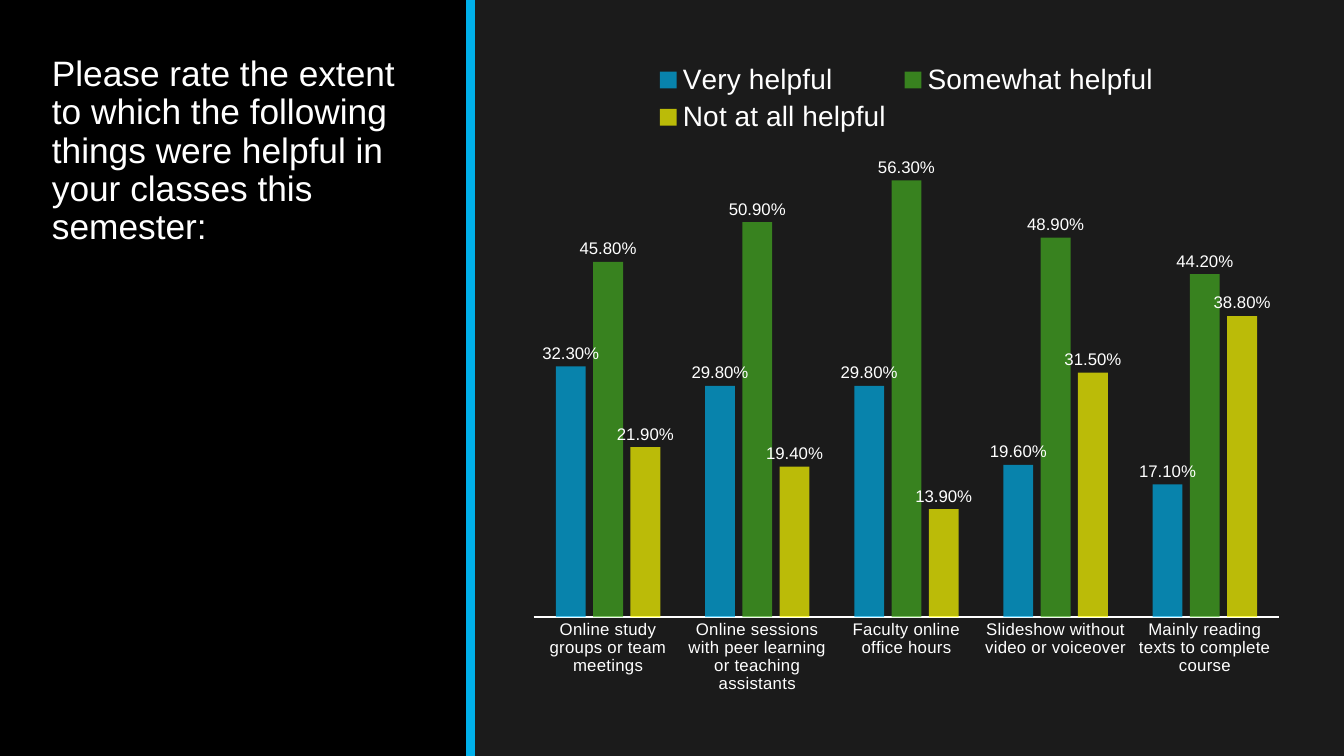
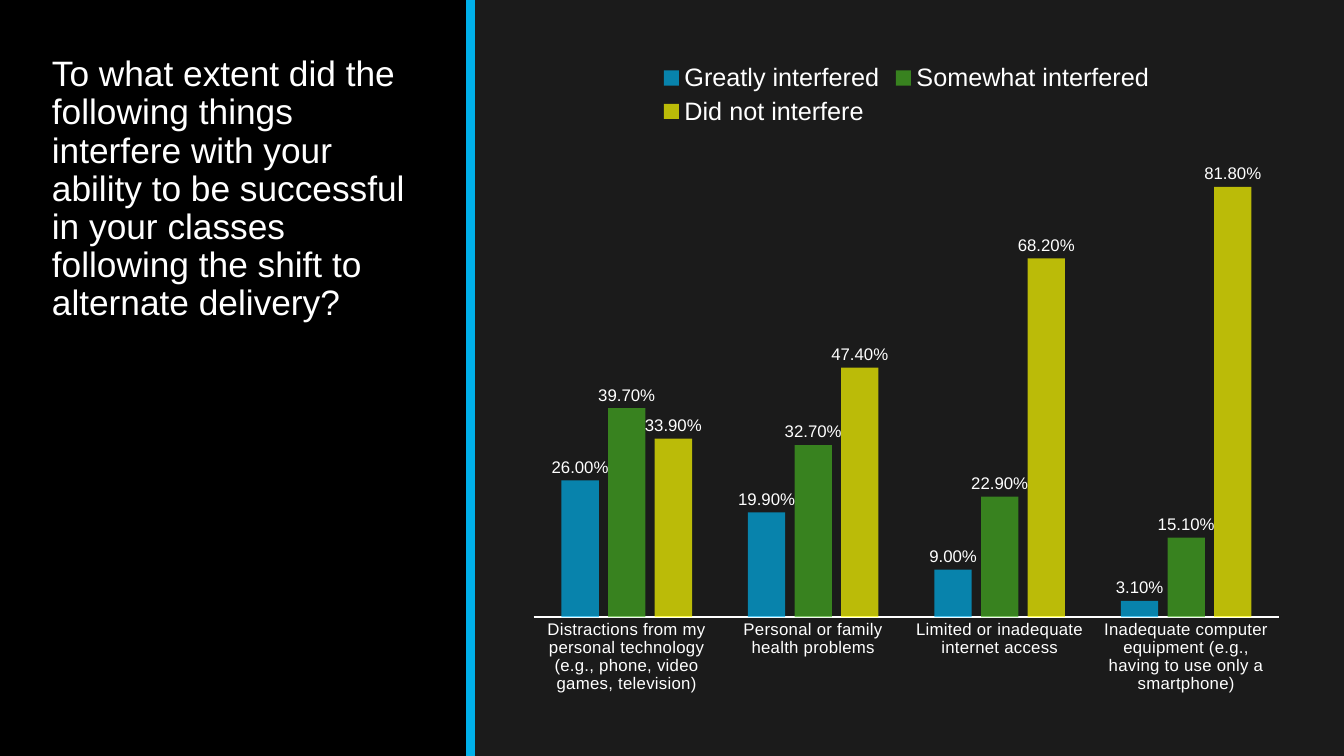
from pptx import Presentation
from pptx.chart.data import CategoryChartData
from pptx.dml.color import RGBColor
from pptx.enum.chart import (XL_CHART_TYPE, XL_LABEL_POSITION,
                             XL_LEGEND_POSITION, XL_TICK_MARK)
from pptx.enum.shapes import MSO_CONNECTOR, MSO_SHAPE
from pptx.oxml.ns import qn
from pptx.util import Pt

COLUMN_CLUSTERED = XL_CHART_TYPE.COLUMN_CLUSTERED
OUTSIDE_END = XL_LABEL_POSITION.OUTSIDE_END
LEGEND_TOP = XL_LEGEND_POSITION.TOP
NO_TICK = XL_TICK_MARK.NONE
STRAIGHT = MSO_CONNECTOR.STRAIGHT
RECTANGLE = MSO_SHAPE.RECTANGLE

FONT = "Arial"
PERCENT = "0.00%"
CHARCOAL = RGBColor(0x1B, 0x1B, 0x1B)
BLACK = RGBColor(0x00, 0x00, 0x00)
WHITE = RGBColor(0xFF, 0xFF, 0xFF)
BLUE = RGBColor(0x00, 0xB0, 0xEA)
GREEN = RGBColor(0x45, 0xAE, 0x22)
YELLOW = RGBColor(0xFF, 0xFF, 0x00)
SERIES_COLORS = [BLUE, GREEN, YELLOW]

WIDTH, HEIGHT = Pt(960), Pt(540)
PANEL_WIDTH = Pt(336)
CONTENT_TOP = Pt(36.7)

# Survey questions: title, legend size, categories, answers
QUESTIONS = [
    ("Please rate the extent to which the following things were helpful "
     "in your classes this semester:",
     20,
     ["Online study groups or team meetings",
      "Online sessions with peer learning or teaching assistants",
      "Faculty online office hours",
      "Slideshow without video or voiceover",
      "Mainly reading texts to complete course"],
     {"Very helpful": [0.323, 0.298, 0.298, 0.196, 0.171],
      "Somewhat helpful": [0.458, 0.509, 0.563, 0.489, 0.442],
      "Not at all helpful": [0.219, 0.194, 0.139, 0.315, 0.388]}),
    ("To what extent did the following things interfere with your ability "
     "to be successful in your classes following the shift to alternate "
     "delivery?",
     18,
     ["Distractions from my personal technology (e.g., phone, video games, "
      "television)",
      "Personal or family health problems",
      "Limited or inadequate internet access",
      "Inadequate computer equipment (e.g., having to use only a smartphone)"],
     {"Greatly interfered": [0.26, 0.199, 0.09, 0.031],
      "Somewhat interfered": [0.397, 0.327, 0.229, 0.151],
      "Did not interfere": [0.339, 0.474, 0.682, 0.818]}),
]


def style_font(font, size):
    font.name = FONT
    font.size = Pt(size)
    font.color.rgb = WHITE


presentation = Presentation()
presentation.slide_width = WIDTH
presentation.slide_height = HEIGHT
master_fill = presentation.slide_master.background.fill
master_fill.solid()
master_fill.fore_color.rgb = CHARCOAL
blank_layout = presentation.slide_layouts[6]

for title, legend_size, categories, answers in QUESTIONS:
    slide = presentation.slides.add_slide(blank_layout)

    # Left panel with its blue edge
    panel = slide.shapes.add_shape(RECTANGLE, 0, 0, PANEL_WIDTH, HEIGHT)
    panel.shadow.inherit = False
    panel.fill.solid()
    panel.fill.fore_color.rgb = BLACK
    panel.line.fill.background()
    edge = slide.shapes.add_connector(STRAIGHT, PANEL_WIDTH, 0,
                                      PANEL_WIDTH, HEIGHT)
    edge.line.color.rgb = BLUE
    edge.line.width = Pt(6)
    properties = edge.element.spPr
    properties.append(properties.makeelement(qn("a:effectLst"), {}))

    # Question
    title_box = slide.shapes.add_textbox(Pt(30), CONTENT_TOP, Pt(276), Pt(126))
    title_box.text_frame.word_wrap = True
    title_box.text_frame.text = title
    paragraph = title_box.text_frame.paragraphs[0]
    paragraph.line_spacing = 0.9
    style_font(paragraph.runs[0].font, 25.2)

    # Column chart
    chart_data = CategoryChartData(number_format=PERCENT)
    chart_data.categories = categories
    for name, values in answers.items():
        chart_data.add_series(name, values)
    chart = slide.shapes.add_chart(COLUMN_CLUSTERED, Pt(370), CONTENT_TOP,
                                   Pt(555), Pt(467.3), chart_data).chart
    chart.has_title = False
    style_font(chart.font, 10)

    plot = chart.plots[0]
    plot.gap_width = 150
    plot.overlap = -25
    plot.vary_by_categories = False
    for series, color in zip(plot.series, SERIES_COLORS):
        series.format.fill.solid()
        series.format.fill.fore_color.rgb = color
        labels = series.data_labels
        labels.show_value = True
        labels.number_format = PERCENT
        labels.number_format_is_linked = False
        labels.position = OUTSIDE_END
        style_font(labels.font, 12)

    # Columns at 70 % opacity
    for color in chart.element.xpath(".//c:ser/c:spPr/a:solidFill/a:srgbClr"):
        color.append(color.makeelement(qn("a:alpha"), {"val": "70000"}))

    # Axes
    category_axis = chart.category_axis
    category_axis.major_tick_mark = NO_TICK
    category_axis.minor_tick_mark = NO_TICK
    category_axis.format.line.color.rgb = WHITE
    category_axis.format.line.width = Pt(1.25)
    style_font(category_axis.tick_labels.font, 12)
    for run_style in chart.element.xpath(".//c:catAx/c:txPr//a:defRPr"):
        run_style.set("spc", "20")
    chart.value_axis.visible = False
    chart.value_axis.has_major_gridlines = False
    chart.value_axis.minimum_scale = 0

    # Legend
    chart.has_legend = True
    chart.legend.position = LEGEND_TOP
    chart.legend.include_in_layout = False
    style_font(chart.legend.font, legend_size)

presentation.save("out.pptx")
